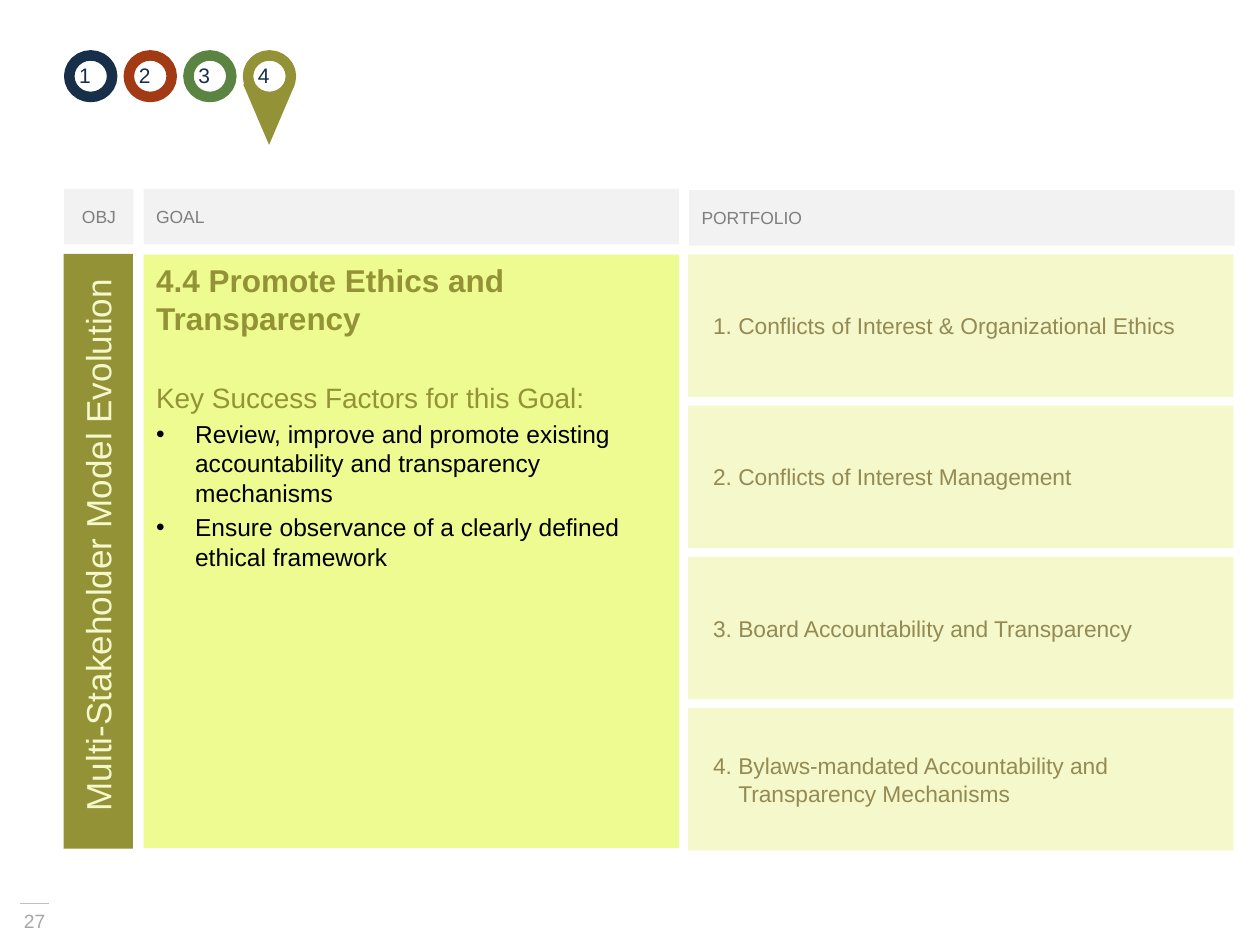
from pptx import Presentation
from pptx.dml.color import RGBColor
from pptx.enum.shapes import MSO_CONNECTOR, MSO_SHAPE
from pptx.enum.text import MSO_ANCHOR, PP_ALIGN
from pptx.oxml.ns import qn
from pptx.util import Inches, Pt
from lxml import etree

LINE = MSO_CONNECTOR.STRAIGHT
RECT, OVAL, POINT = MSO_SHAPE.RECTANGLE, MSO_SHAPE.OVAL, MSO_SHAPE.FLOWCHART_EXTRACT
TOP, MID = MSO_ANCHOR.TOP, MSO_ANCHOR.MIDDLE
LEFT, MIDDLE, RIGHT, FULL = PP_ALIGN.LEFT, PP_ALIGN.CENTER, PP_ALIGN.RIGHT, PP_ALIGN.JUSTIFY


class Theme:
    font = "Arial"
    navy, rust, green, olive = "172F48", "A23B14", "5B8341", "949237"
    lime, pale, tan = "EDFB91", "F4F8CB", "948A54"
    white, black = "FFFFFF", "000000"
    band, label, rule, page = "F2F2F2", "7F7F7F", "BFBFBF", "A6A6A6"
    side, head, sub, item, list, num, foot, tag = 20, 18, 16, 13, 14, 12, 11, 10


def block(kind, x, y, w, h, fill, line=None, turn=0):
    shape = slide.shapes.add_shape(kind, Inches(x), Inches(y), Inches(w), Inches(h))
    shape.shadow.inherit = False
    shape.rotation = turn
    shape.fill.solid()
    shape.fill.fore_color.rgb = RGBColor.from_string(fill)
    if line:
        shape.line.color.rgb = RGBColor.from_string(line)
        shape.line.width = Pt(6)
    else:
        shape.line.fill.background()
    return shape


def write(shape, text, size, color, bold=False, align=LEFT, anchor=TOP,
          inset=(0.1, 0.05, 0.1, 0.05), before=0, hang=0, bullet=None, more=False):
    """Set the text of a shape, or add a paragraph when more is true."""
    frame = shape.text_frame
    frame.word_wrap = True
    if not more:
        frame.vertical_anchor = anchor
        (frame.margin_left, frame.margin_top,
         frame.margin_right, frame.margin_bottom) = map(Inches, inset)
    para = frame.add_paragraph() if more else frame.paragraphs[0]
    para.text = text
    para.alignment = align
    if before:
        para.space_before = Pt(before)
    if hang:
        props = para._p.get_or_add_pPr()
        props.set("marL", str(Inches(hang)))
        props.set("indent", str(-Inches(hang)))
        if bullet:
            etree.SubElement(props, qn("a:buFont")).set("typeface", Theme.font)
            etree.SubElement(props, qn("a:buChar")).set("char", bullet)
    for run in para.runs:
        run.font.name = Theme.font
        run.font.size = Pt(size)
        run.font.bold = bold
        run.font.color.rgb = RGBColor.from_string(color)


deck = Presentation()
deck.slide_width, deck.slide_height = Inches(10), Inches(7.5)
slide = deck.slides.add_slide(deck.slide_layouts[6])

# Page number with its rule
rule = slide.shapes.add_connector(LINE, Inches(0.16), Inches(7.17), Inches(0.39), Inches(7.17))
rule.line.color.rgb = RGBColor.from_string(Theme.rule)
rule.line.width = Pt(0.75)
etree.SubElement(rule._element.spPr, qn("a:effectLst"))
page = slide.shapes.add_textbox(Inches(0.04), Inches(7.17), Inches(0.47), Inches(0.29))
write(page, "27", Theme.foot, Theme.page, align=MIDDLE)

# Column heads
heads = [("OBJ", 0.51, 1.5, 0.55, 0, MIDDLE),
         ("GOAL", 1.14, 1.5, 4.25, 0.1, LEFT),
         ("PORTFOLIO", 5.47, 1.51, 4.33, 0.1, LEFT)]
for name, x, y, w, pad, align in heads:
    head = block(RECT, x, y, w, 0.44, Theme.band)
    write(head, name, Theme.tag, Theme.label, align=align, anchor=MID, inset=(pad, 0, 0, 0))

# Objective, turned to read upwards
side = block(RECT, -1.58, 4.1, 4.72, 0.55, Theme.olive, turn=270)
write(side, "Multi-Stakeholder Model Evolution", Theme.side, Theme.pale,
      align=RIGHT, inset=(0.2, 0.1, 0.2, 0))

# Goal and its success factors
goal = block(RECT, 1.14, 2.02, 4.25, 4.71, Theme.lime)
write(goal, "4.4 Promote Ethics and Transparency", Theme.head, Theme.olive,
      bold=True, inset=(0.1, 0.05, 0.1, 0.1))
write(goal, "Key Success Factors for this Goal:", Theme.sub, Theme.olive, before=25, more=True)
for factor in ("Review, improve and promote existing accountability and transparency mechanisms",
               "Ensure observance of a clearly defined ethical framework"):
    write(goal, factor, Theme.list, Theme.black, before=3, hang=0.31, bullet="•", more=True)

# Portfolio cards
cards = ["1. Conflicts of Interest & Organizational Ethics",
         "2. Conflicts of Interest Management",
         "3. Board Accountability and Transparency",
         "4. Bylaws-mandated Accountability and\vTransparency Mechanisms"]
for i, name in enumerate(cards):
    card = block(RECT, 5.46, 2.02 + 1.2 * i, 4.33, 1.13, Theme.pale)
    write(card, name, Theme.item, Theme.tan, anchor=MID, inset=(0.2, 0.05, 0.1, 0.05), hang=0.2)

# Numbered markers, the last one a pin
block(POINT, 1.93, 0.67, 0.41, 0.48, Theme.olive, turn=180)
for i, color in enumerate((Theme.navy, Theme.rust, Theme.green, Theme.olive)):
    x = 0.55 + 0.473 * i
    block(OVAL, x, 0.44, 0.34, 0.33, Theme.white, line=color)
    mark = slide.shapes.add_textbox(Inches(x - 0.02), Inches(0.45), Inches(0.38), Inches(0.3))
    write(mark, str(i + 1), Theme.num, Theme.navy, align=FULL)

deck.save("out.pptx")
